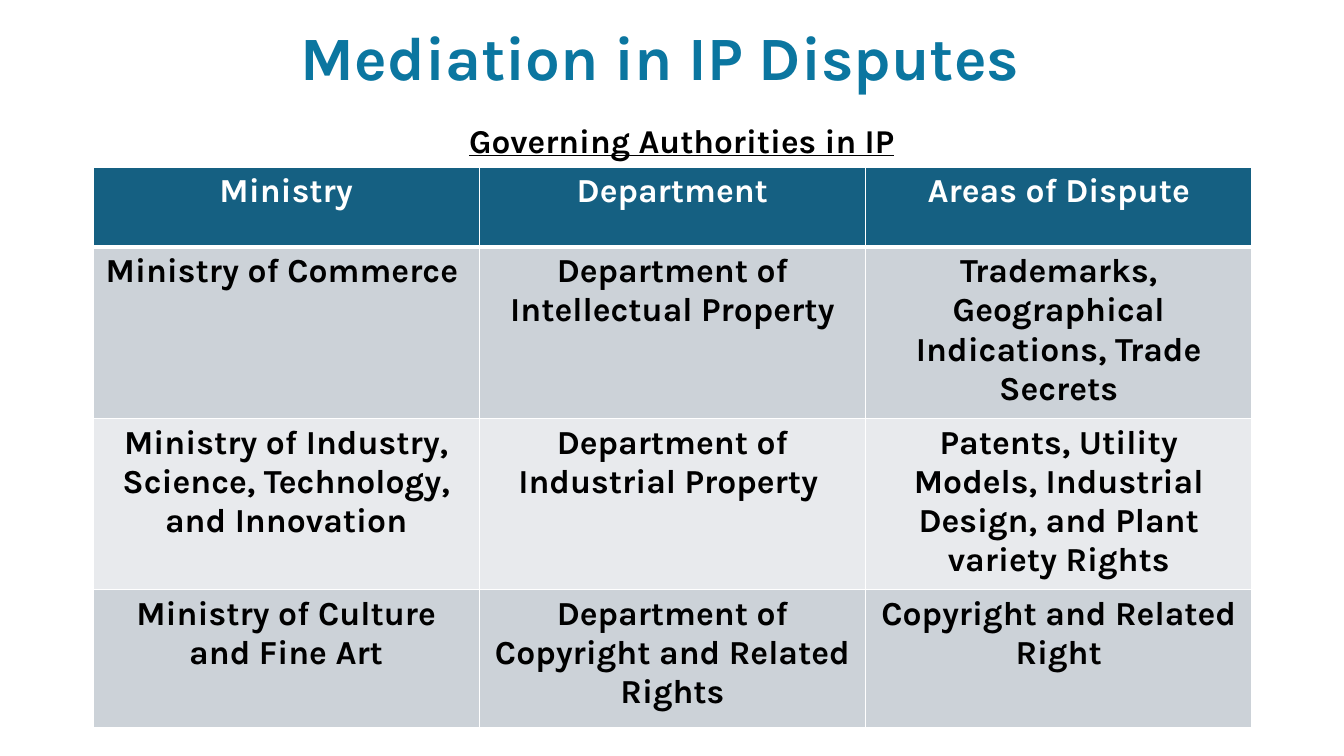
from pptx import Presentation
from pptx.dml.color import RGBColor
from pptx.enum.text import MSO_ANCHOR, PP_ALIGN
from pptx.oxml import parse_xml
from pptx.oxml.ns import nsdecls
from pptx.util import Pt

CENTER = PP_ALIGN.CENTER
TOP = MSO_ANCHOR.TOP
MIDDLE = MSO_ANCHOR.MIDDLE
SLIDE_WIDTH, SLIDE_HEIGHT = 1344, 756
SCALE = 12192000 / SLIDE_WIDTH
TITLE_ONLY = 5
FONT = "Karla"
WHITE, BLACK = "FFFFFF", "000000"
TITLE_BLUE, HEADER_BLUE = "0B76A0", "156082"
BANDS = ["CCD2D8", "E8EAED"]
HEADER_HEIGHT, ROW_HEIGHT = 80, 138

AUTHORITIES = [
    ["Ministry", "Department", "Areas of Dispute"],
    ["Ministry of Commerce ", "Department of Intellectual Property",
     "Trademarks, Geographical Indications, Trade Secrets"],
    ["Ministry of Industry, Science, Technology, and Innovation",
     "Department of Industrial Property ",
     "Patents, Utility Models, Industrial Design, and Plant variety Rights"],
    ["Ministry of Culture and Fine Art", "Department of Copyright and Related Rights",
     "Copyright and Related Right"],
]


def px(length):
    return round(length * SCALE)


def color(value):
    return RGBColor.from_string(value)


def write(text_frame, text, size, text_color, underline=None, line_spacing=None):
    text_frame.text = text
    text_frame.word_wrap = True
    paragraph = text_frame.paragraphs[0]
    paragraph.alignment = CENTER
    paragraph.line_spacing = line_spacing
    font = paragraph.runs[0].font
    font.name = FONT
    font.size = Pt(size)
    font.bold = True
    font.underline = underline
    font.color.rgb = color(text_color)


def add_title(slide, left, top, width, height):
    title = slide.shapes.title
    title.left, title.top = px(left), px(top)
    title.width, title.height = px(width), px(height)
    write(title.text_frame, "Mediation in IP Disputes", 44, TITLE_BLUE, line_spacing=0.9)
    title.text_frame.vertical_anchor = MIDDLE


def add_subtitle(slide, left, top, width, height):
    subtitle = slide.shapes.add_textbox(px(left), px(top), px(width), px(height))
    write(subtitle.text_frame, "Governing Authorities in IP", 23.8, BLACK,
          underline=True, line_spacing=1.3)
    subtitle.text_frame.vertical_anchor = TOP


def add_borders(cell, bottom_width):
    properties = cell._tc.get_or_add_tcPr()
    for side, width in [("L", 1), ("R", 1), ("T", 1), ("B", bottom_width)]:
        properties.append(parse_xml(
            f'<a:ln{side} {nsdecls("a")} w="{Pt(width)}"><a:solidFill>'
            f'<a:srgbClr val="{WHITE}"/></a:solidFill></a:ln{side}>'))


def add_authorities_table(slide, left, top, width):
    row_count, column_count = len(AUTHORITIES), len(AUTHORITIES[0])
    height = HEADER_HEIGHT + ROW_HEIGHT * (row_count - 1)
    table = slide.shapes.add_table(row_count, column_count, px(left), px(top),
                                   px(width), px(height)).table
    for column in table.columns:
        column.width = px(width / column_count)
    for row_index, texts in enumerate(AUTHORITIES):
        is_header = row_index == 0
        table.rows[row_index].height = px(HEADER_HEIGHT if is_header else ROW_HEIGHT)
        fill_color = HEADER_BLUE if is_header else BANDS[(row_index - 1) % 2]
        for column_index, text in enumerate(texts):
            cell = table.cell(row_index, column_index)
            write(cell.text_frame, text, 24, WHITE if is_header else BLACK)
            add_borders(cell, 3 if is_header else 1)
            cell.fill.solid()
            cell.fill.fore_color.rgb = color(fill_color)


def main():
    presentation = Presentation()
    presentation.slide_width = px(SLIDE_WIDTH)
    presentation.slide_height = px(SLIDE_HEIGHT)
    slide = presentation.slides.add_slide(presentation.slide_layouts[TITLE_ONLY])
    add_title(slide, 81, -12, 1159, 146)
    add_subtitle(slide, 72, 103, 1219, 61)
    add_authorities_table(slide, 93, 167, 1159)
    presentation.save("out.pptx")


if __name__ == "__main__":
    main()
